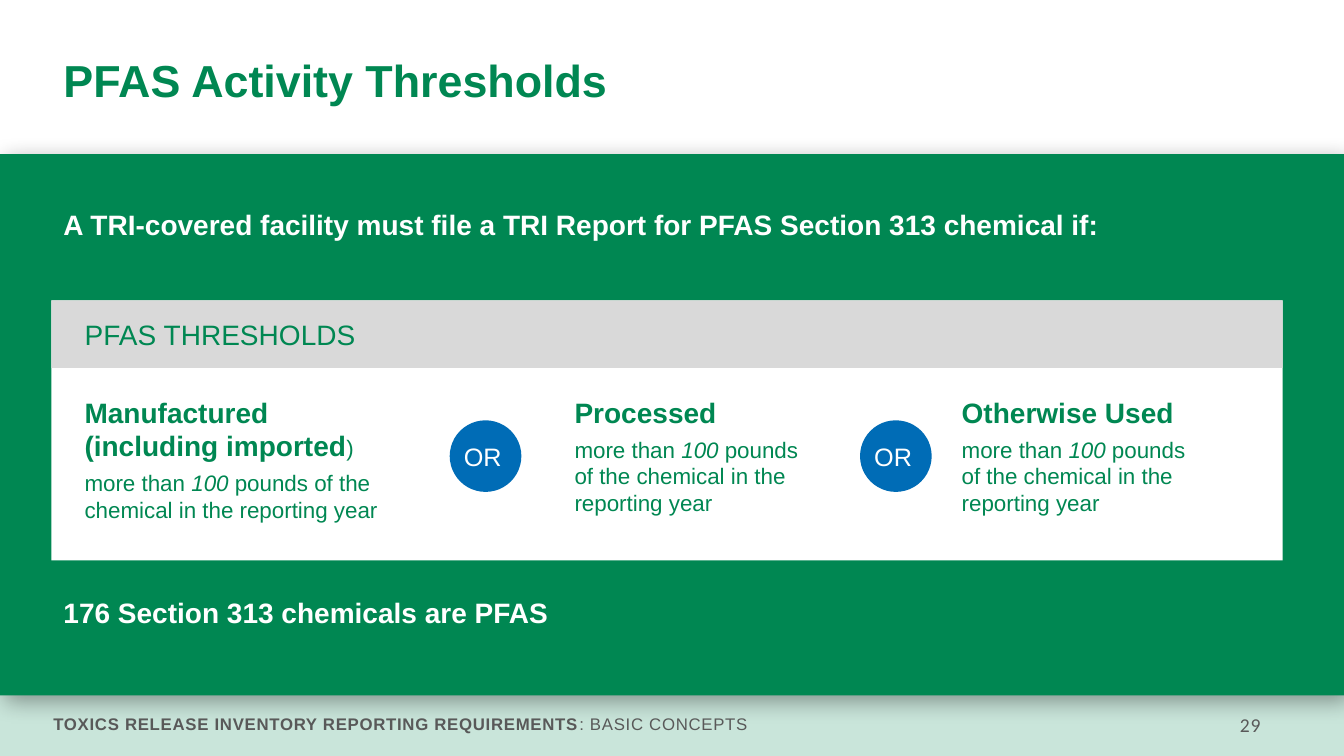
from dataclasses import dataclass
from typing import NamedTuple

from lxml.etree import SubElement
from pptx import Presentation
from pptx.dml.color import RGBColor
from pptx.enum.shapes import MSO_SHAPE
from pptx.enum.text import MSO_ANCHOR, PP_ALIGN
from pptx.oxml.ns import qn
from pptx.shapes.autoshape import Shape
from pptx.slide import Slide
from pptx.util import Emu, Inches, Pt

WIDTH, HEIGHT = Inches(13.33), Inches(7.5)


@dataclass(frozen=True)
class Theme:
    green: str = "008752"
    blue: str = "006CB6"
    white: str = "FFFFFF"
    band: str = "D9D9D9"
    footer: str = "595959"
    body_font: str = "Arial"
    number_font: str = "Calibri"
    title_size: int = 32
    heading_size: int = 20
    or_size: int = 18
    detail_size: int = 16
    number_size: int = 14
    footer_size: int = 12


THEME = Theme()


class Area(NamedTuple):
    """Left, top, width and height in percent of the slide."""
    left: float
    top: float
    width: float
    height: float

    def emu(self) -> tuple[Emu, Emu, Emu, Emu]:
        return (across(self.left), down(self.top),
                across(self.width), down(self.height))


class Words(NamedTuple):
    text: str
    size: int
    color: str
    bold: bool = False
    italic: bool = False
    font: str = THEME.body_font
    tracking: int = 0  # hundredths of a point


class Line(NamedTuple):
    words: list[Words]
    before: int = 0
    align: PP_ALIGN = PP_ALIGN.LEFT
    spacing: float = 1.0


class Threshold(NamedTuple):
    left: float
    width: float
    activity: str
    ending: str = ""


def across(percent: float) -> Emu:
    return Emu(round(WIDTH * percent / 100))


def down(percent: float) -> Emu:
    return Emu(round(HEIGHT * percent / 100))


def write(owner: Shape, lines: list[Line], anchor: MSO_ANCHOR = MSO_ANCHOR.TOP) -> None:
    frame = owner.text_frame
    frame.word_wrap = True
    frame.vertical_anchor = anchor
    for index, line in enumerate(lines):
        paragraph = frame.add_paragraph() if index else frame.paragraphs[0]
        paragraph.alignment = line.align
        paragraph.line_spacing = line.spacing
        paragraph.space_before = Pt(line.before)
        for words in line.words:
            run = paragraph.add_run()
            run.text = words.text
            run.font.name = words.font
            run.font.size = Pt(words.size)
            run.font.bold = words.bold
            run.font.italic = words.italic
            run.font.color.rgb = RGBColor.from_string(words.color)
            if words.tracking:
                run.font._element.set("spc", str(words.tracking))


def add_text(slide: Slide, area: Area, lines: list[Line],
             anchor: MSO_ANCHOR = MSO_ANCHOR.TOP) -> None:
    write(slide.shapes.add_textbox(*area.emu()), lines, anchor)


def add_block(slide: Slide, area: Area, color: str,
              kind: MSO_SHAPE = MSO_SHAPE.RECTANGLE) -> Shape:
    block = slide.shapes.add_shape(kind, *area.emu())
    block.shadow.inherit = False
    block.fill.solid()
    block.fill.fore_color.rgb = RGBColor.from_string(color)
    block.line.fill.background()
    return block


def set_opacity(color: object, percent: int) -> None:
    SubElement(color, qn("a:alpha")).set("val", str(percent * 1000))


def add_soft_shadow(block: Shape) -> None:
    effects = block._element.spPr.find(qn("a:effectLst"))
    shadow = SubElement(effects, qn("a:outerShdw"), blurRad=str(Pt(16)),
                        dist=str(Pt(5.66)), dir="2700000", rotWithShape="0")
    set_opacity(SubElement(shadow, qn("a:srgbClr"), val="000000"), 34)


def add_threshold(slide: Slide, threshold: Threshold) -> None:
    heading = [Words(threshold.activity, THEME.heading_size, THEME.green, bold=True)]
    if threshold.ending:
        heading.append(Words(threshold.ending, THEME.detail_size, THEME.green))
    detail = [
        Words("more than ", THEME.detail_size, THEME.green),
        Words("100", THEME.detail_size, THEME.green, italic=True),
        Words(" pounds of the chemical in the reporting year",
              THEME.detail_size, THEME.green),
    ]
    add_text(slide, Area(threshold.left, 51.6, threshold.width, 17.73),
             [Line(heading), Line(detail, before=5)])


def add_or(slide: Slide, left: float) -> None:
    circle = add_block(slide, Area(left, 55.6, 5.33, 9.47), THEME.blue, MSO_SHAPE.OVAL)
    frame = circle.text_frame
    frame.margin_left = frame.margin_top = frame.margin_bottom = 0
    frame.margin_right = across(0.4)
    write(circle, [Line([Words("OR", THEME.or_size, THEME.white)],
                        align=PP_ALIGN.CENTER)], MSO_ANCHOR.MIDDLE)


def main() -> None:
    deck = Presentation()
    deck.slide_width, deck.slide_height = WIDTH, HEIGHT
    slide = deck.slides.add_slide(deck.slide_layouts[6])

    # Footer strip and green field
    strip = add_block(slide, Area(0, 89.6, 100, 10.4), THEME.green)
    set_opacity(strip._element.spPr.find(qn("a:solidFill"))[0], 21)
    add_soft_shadow(add_block(slide, Area(0, 20.4, 100, 71.6), THEME.green))

    # Footer text and page number
    add_text(slide, Area(3.23, 93.73, 63.17, 4), [Line([
        Words("TOXICS RELEASE INVENTORY REPORTING REQUIREMENTS",
              THEME.footer_size, THEME.footer, bold=True, tracking=50),
        Words(": BASIC CONCEPTS", THEME.footer_size, THEME.footer, tracking=50),
    ])])
    add_text(slide, Area(84.55, 93.6, 9.98, 4.53), [Line(
        [Words("29", THEME.number_size, THEME.footer,
               font=THEME.number_font, tracking=50)], align=PP_ALIGN.RIGHT)])

    # Title
    add_text(slide, Area(3.98, 5.6, 90.55, 10.8), [Line(
        [Words("PFAS Activity Thresholds", THEME.title_size, THEME.green, bold=True)],
        spacing=0.9)], MSO_ANCHOR.MIDDLE)

    # Statements above and below the panel
    for top, height, statement in (
        (26.8, 12.53, "A TRI-covered facility must file a TRI Report "
                      "for PFAS Section 313 chemical if:"),
        (78.13, 5.87, "176 Section 313 chemicals are PFAS"),
    ):
        add_text(slide, Area(3.98, top, 90.55, height), [Line(
            [Words(statement, THEME.heading_size, THEME.white, bold=True)])])

    # Threshold panel with its heading band
    add_block(slide, Area(3.83, 39.73, 91.6, 34.4), THEME.white)
    band = add_block(slide, Area(3.83, 39.73, 91.6, 8.93), THEME.band)
    band.text_frame.margin_left = across(2.47)
    write(band, [Line([Words("PFAS THRESHOLDS", THEME.heading_size, THEME.green)])],
          MSO_ANCHOR.MIDDLE)

    # The three activities, separated by OR
    for threshold in (
        Threshold(5.55, 24.8, "Manufactured (including imported", ")"),
        Threshold(42.01, 19.8, "Processed"),
        Threshold(70.82, 19.8, "Otherwise Used"),
    ):
        add_threshold(slide, threshold)
    for left in (33.46, 63.99):
        add_or(slide, left)

    deck.save("out.pptx")


if __name__ == "__main__":
    main()
